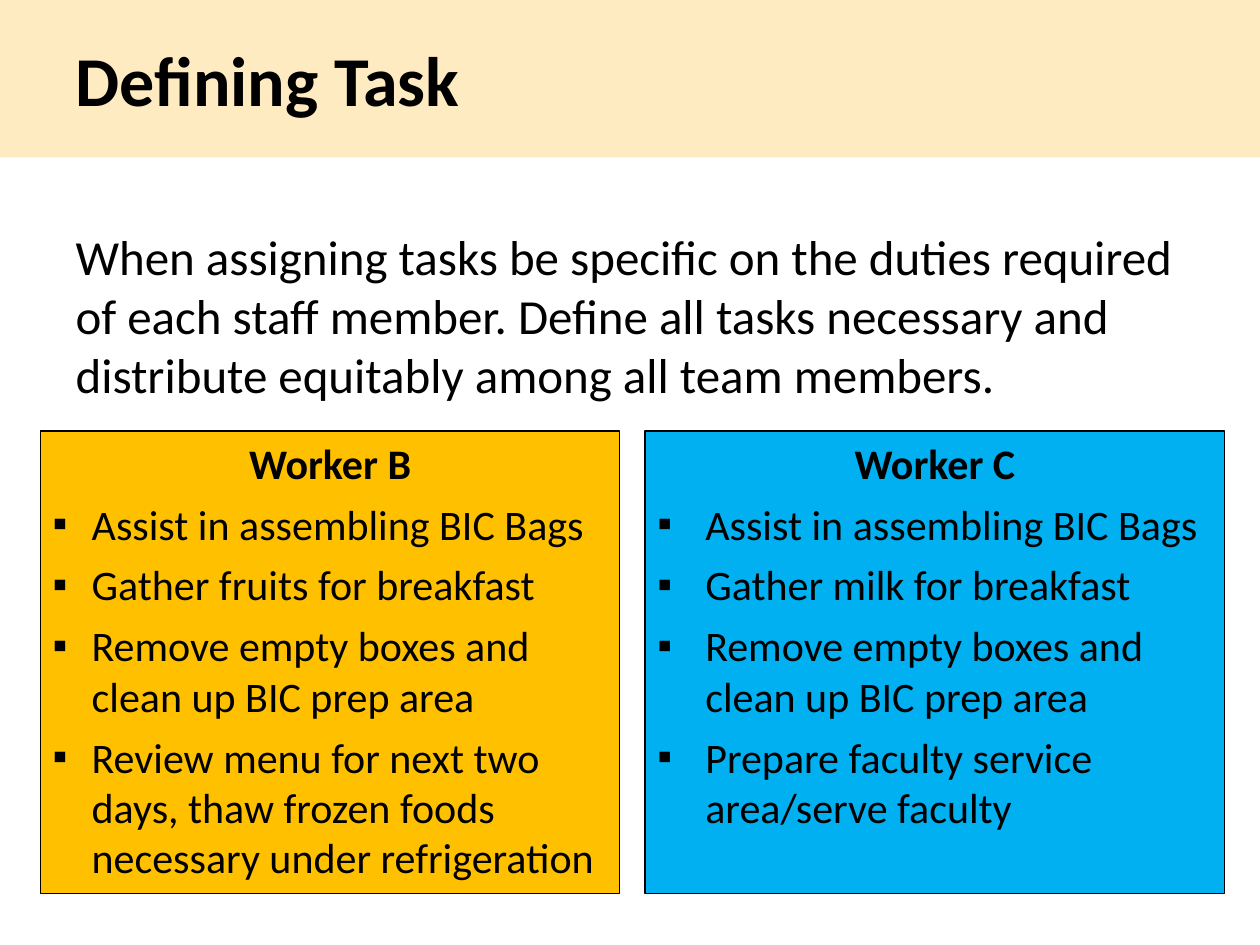
from dataclasses import dataclass

from lxml.etree import SubElement
from pptx import Presentation
from pptx.dml.color import RGBColor
from pptx.enum.shapes import MSO_SHAPE
from pptx.enum.text import MSO_ANCHOR, MSO_AUTO_SIZE, PP_ALIGN
from pptx.oxml.ns import qn
from pptx.util import Inches, Pt


@dataclass(frozen=True)
class Theme:
    font: str = "Calibri"
    ink: RGBColor = RGBColor(0x00, 0x00, 0x00)
    band: RGBColor = RGBColor(0xFF, 0xEB, 0xC2)
    amber: RGBColor = RGBColor(0xFF, 0xC0, 0x00)
    blue: RGBColor = RGBColor(0x00, 0xB0, 0xF0)
    title_size: int = 40
    body_size: int = 28
    card_size: int = 24
    space_after: int = 6
    outline: float = 0.75


THEME = Theme()
WIDTH, HEIGHT = 10, 7.5

# Card grid, in inches
CARD_LEFT, CARD_TOP = 0.32, 3.42
CARD_WIDTH, CARD_HEIGHT = 4.6, 3.67
CARD_GAP = 0.2

# Heading, fill, bullet indent, tasks
WORKERS = [
    ("Worker B", THEME.amber, 0.31, [
        "Assist in assembling BIC Bags",
        "Gather fruits for breakfast",
        "Remove empty boxes and clean up BIC prep area",
        "Review menu for next two days, thaw frozen foods necessary under refrigeration",
    ]),
    ("Worker C", THEME.blue, 0.38, [
        "Assist in assembling BIC Bags",
        "Gather milk for breakfast",
        "Remove empty boxes and clean up BIC prep area",
        "Prepare faculty service area/serve faculty",
    ]),
]


def place(shape, left, top, width, height):
    shape.left, shape.top = Inches(left), Inches(top)
    shape.width, shape.height = Inches(width), Inches(height)


def set_bullet(paragraph, indent, character=None):
    """Set a hanging indent with a bullet, or no bullet without a character."""
    properties = paragraph._p.get_or_add_pPr()
    properties.set("marL", str(Inches(indent)))
    properties.set("indent", str(-Inches(indent)))
    if character:
        SubElement(properties, qn("a:buFont"), typeface="Arial")
        SubElement(properties, qn("a:buChar"), char=character)
    else:
        SubElement(properties, qn("a:buNone"))


def style(paragraph, size, bold=False, align=PP_ALIGN.LEFT, after=THEME.space_after):
    paragraph.alignment = align
    paragraph.space_before = Pt(0)
    paragraph.space_after = Pt(after)
    font = paragraph.font
    font.name, font.size, font.bold = THEME.font, Pt(size), bold
    font.color.rgb = THEME.ink


def fill_title(title, text):
    place(title, 0, 0, WIDTH, HEIGHT / 6)
    title.fill.solid()
    title.fill.fore_color.rgb = THEME.band
    frame = title.text_frame
    frame.text = text
    frame.auto_size = MSO_AUTO_SIZE.NONE
    frame.vertical_anchor = MSO_ANCHOR.MIDDLE
    frame.margin_left = Inches(0.6)
    style(frame.paragraphs[0], THEME.title_size, bold=True, after=0)


def fill_body(body, text):
    place(body, 0.5, 1.75, 9.25, 4.95)
    frame = body.text_frame
    frame.text = text
    frame.auto_size = MSO_AUTO_SIZE.NONE
    set_bullet(frame.paragraphs[0], 0)
    style(frame.paragraphs[0], THEME.body_size)


def add_card(slide, column, heading, color, indent, tasks):
    left = CARD_LEFT + column * (CARD_WIDTH + CARD_GAP)
    card = slide.shapes.add_shape(
        MSO_SHAPE.RECTANGLE, Inches(left), Inches(CARD_TOP),
        Inches(CARD_WIDTH), Inches(CARD_HEIGHT))
    card.shadow.inherit = False
    card.fill.solid()
    card.fill.fore_color.rgb = color
    card.line.color.rgb = THEME.ink
    card.line.width = Pt(THEME.outline)

    frame = card.text_frame
    frame.word_wrap = True
    frame.vertical_anchor = MSO_ANCHOR.TOP
    frame.text = heading
    style(frame.paragraphs[0], THEME.card_size, bold=True, align=PP_ALIGN.CENTER)
    for task in tasks:
        paragraph = frame.add_paragraph()
        paragraph.text = task
        set_bullet(paragraph, indent, "▪")
        style(paragraph, THEME.card_size)


def main():
    presentation = Presentation()
    presentation.slide_width, presentation.slide_height = Inches(WIDTH), Inches(HEIGHT)
    slide = presentation.slides.add_slide(presentation.slide_layouts[1])

    # Title band and introduction
    fill_title(slide.shapes.title, "Defining Task")
    fill_body(slide.placeholders[1],
              "When assigning tasks be specific on the duties required of each staff "
              "member. Define all tasks necessary and distribute equitably among all "
              "team members.")

    # One card per worker
    for column, worker in enumerate(WORKERS):
        add_card(slide, column, *worker)

    presentation.save("out.pptx")


if __name__ == "__main__":
    main()
